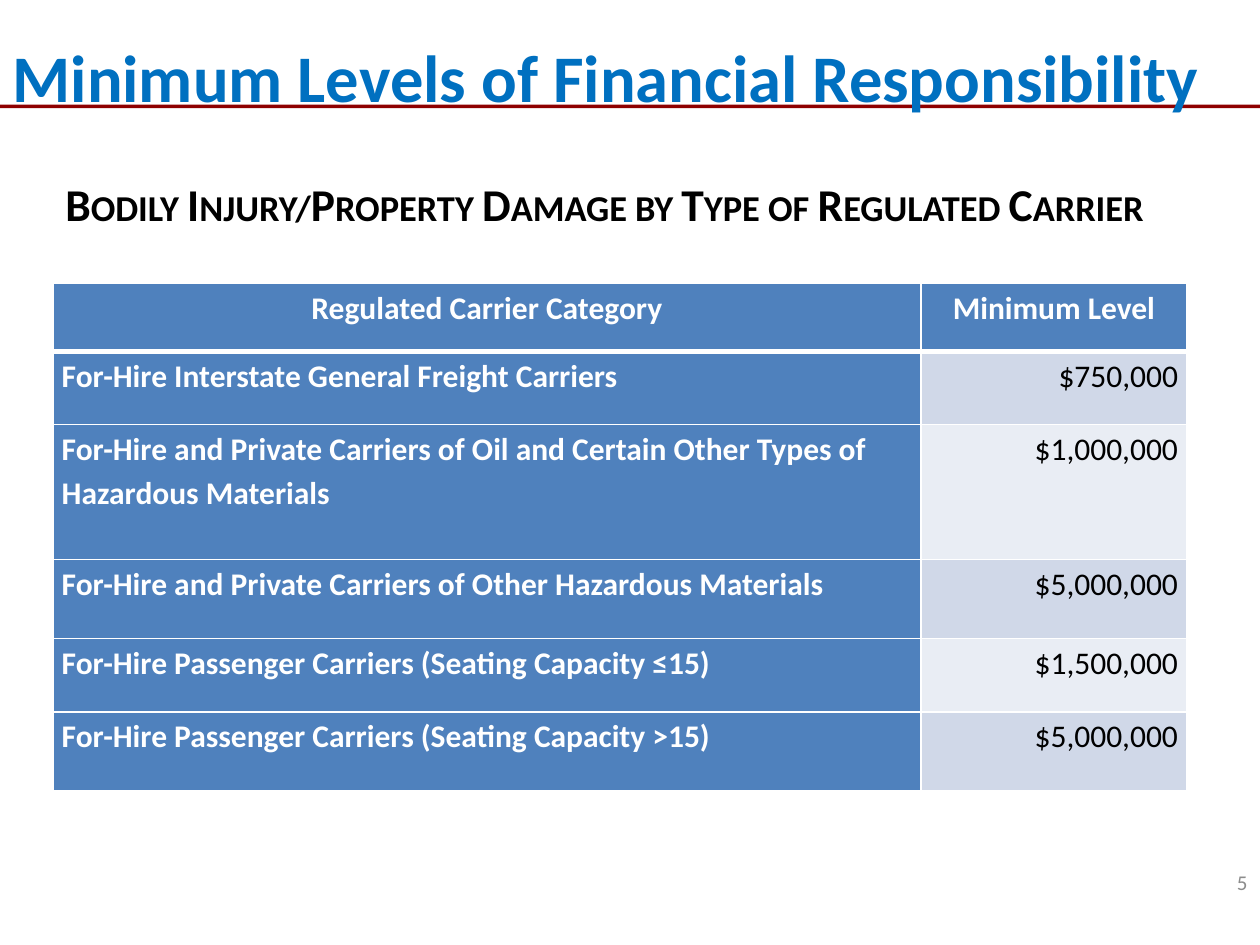
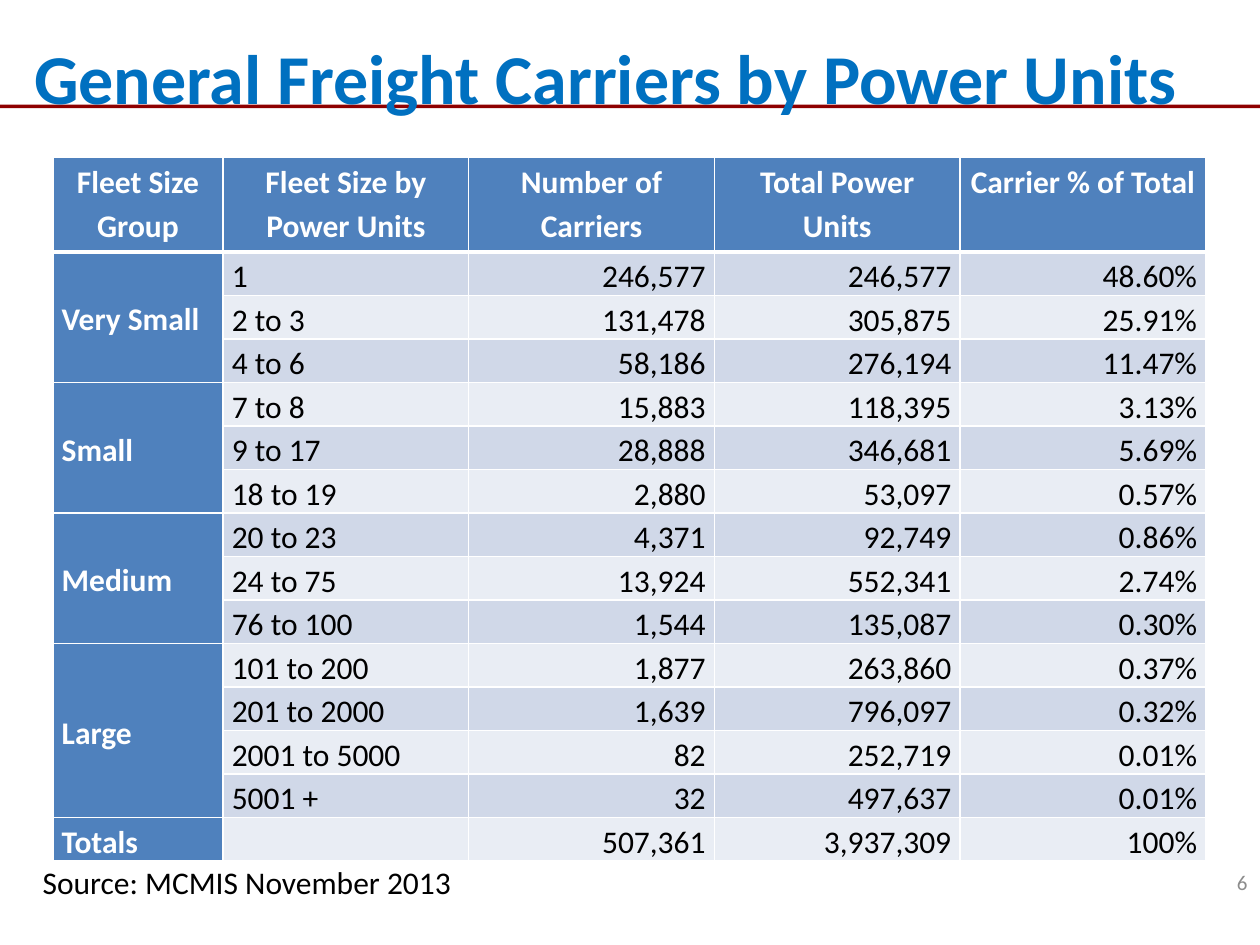
"""Build two slides on carrier insurance levels and fleet sizes."""
import pptx
import pptx.dml.color
import pptx.enum.shapes
import pptx.enum.text
import pptx.oxml
import pptx.oxml.ns
import pptx.util

PX = 9144
FONT = "Calibri"
TITLE_BLUE, TABLE_BLUE, BAND_RED = "0070C0", "4F81BD", "8E0000"
ROW_TINTS = ["E9EDF4", "D0D8E8"]
WHITE, BLACK, GREY = "FFFFFF", "000000", "8C8C8C"
ALIGN = pptx.enum.text.PP_ALIGN
ANCHOR = pptx.enum.text.MSO_ANCHOR


def paint(color):
    return pptx.dml.color.RGBColor.from_string(color)


def write(frame, text, size=18, color=BLACK, bold=False, align=ALIGN.LEFT,
          anchor=ANCHOR.TOP, spacing=1.0, small_caps=False):
    frame.word_wrap = True
    frame.vertical_anchor = anchor
    for number, line in enumerate(text.split("\n")):
        para = frame.add_paragraph() if number else frame.paragraphs[0]
        para.alignment = align
        para.line_spacing = spacing
        span = para.add_run()
        span.text = line
        span.font.name = FONT
        span.font.size = pptx.util.Pt(size)
        span.font.bold = bold
        span.font.color.rgb = paint(color)
        if small_caps:
            span.font._element.set("cap", "small")


pages = [
    {
        "title": "Minimum Levels of Financial Responsibility",
        "title_size": 38, "title_left": 0, "number": "5",
        "caption": "Bodily Injury/Property Damage by Type of Regulated Carrier",
        "caption_box": (42, 135, 950, 54),
        "caption_format": {"size": 26, "bold": True, "small_caps": True},
        "top": 225, "widths": [689, 211],
        "heights": [54, 58, 107, 63, 58, 63],
        "text_columns": 1, "anchor": ANCHOR.TOP, "groups": [],
        "rows": [
            ["Regulated Carrier Category", "Minimum Level"],
            ["For-Hire Interstate General Freight Carriers", "$750,000"],
            ["For-Hire and Private Carriers of Oil and Certain Other Types of "
             "Hazardous Materials", "$1,000,000"],
            ["For-Hire and Private Carriers of Other Hazardous Materials", "$5,000,000"],
            ["For-Hire Passenger Carriers (Seating Capacity ≤15)", "$1,500,000"],
            ["For-Hire Passenger Carriers (Seating Capacity >15)", "$5,000,000"],
        ],
    },
    {
        "title": "General Freight Carriers by Power Units",
        "title_size": 40, "title_left": 17, "number": "6",
        "caption": "Source: MCMIS November 2013",
        "caption_box": (24, 680, 400, 40),
        "caption_format": {},
        "top": 125, "widths": [135] + [195] * 4,
        "heights": [75] + [34] * 14,
        "text_columns": 2, "anchor": ANCHOR.MIDDLE,
        "groups": [(1, 3), (4, 6), (7, 9), (10, 13)],
        "rows": [
            ["Fleet Size Group", "Fleet Size by\nPower Units", "Number of Carriers",
             "Total Power Units", "Carrier % of Total"],
            ["Very Small", "1", "246,577", "246,577", "48.60%"],
            ["", "2 to 3", "131,478", "305,875", "25.91%"],
            ["", "4 to 6", "58,186", "276,194", "11.47%"],
            ["Small", "7 to 8", "15,883", "118,395", "3.13%"],
            ["", "9 to 17", "28,888", "346,681", "5.69%"],
            ["", "18 to 19", "2,880", "53,097", "0.57%"],
            ["Medium", "20 to 23", "4,371", "92,749", "0.86%"],
            ["", "24 to 75", "13,924", "552,341", "2.74%"],
            ["", "76 to 100", "1,544", "135,087", "0.30%"],
            ["Large", "101 to 200", "1,877", "263,860", "0.37%"],
            ["", "201 to 2000", "1,639", "796,097", "0.32%"],
            ["", "2001 to 5000", "82", "252,719", "0.01%"],
            ["", "5001 +", "32", "497,637", "0.01%"],
            ["Totals", "", "507,361", "3,937,309", "100%"],
        ],
    },
]

deck = pptx.Presentation()
deck.slide_width, deck.slide_height = 1000 * PX, 750 * PX
layout = deck.slide_layouts[5]

for page in pages:
    slide = deck.slides.add_slide(layout)
    if page is pages[0]:
        band = slide.shapes.add_shape(
            pptx.enum.shapes.MSO_SHAPE.RECTANGLE, 0, 83 * PX, 1000 * PX, 3 * PX)
        band.shadow.inherit = False
        band.fill.solid()
        band.fill.fore_color.rgb = paint(BAND_RED)
        band.line.fill.background()
        deck.slide_master.shapes._spTree.append(band._element)

    title = slide.shapes.title
    title.left, title.top = page["title_left"] * PX, 17 * PX
    title.width, title.height = (1000 - page["title_left"]) * PX, 87 * PX
    title.text_frame.auto_size = pptx.enum.text.MSO_AUTO_SIZE.NONE
    write(title.text_frame, page["title"], size=page["title_size"],
          color=TITLE_BLUE, bold=True, anchor=ANCHOR.MIDDLE)

    number_box = slide.shapes.add_textbox(767 * PX, 680 * PX, 233 * PX, 40 * PX)
    write(number_box.text_frame, page["number"], size=12, color=GREY,
          align=ALIGN.RIGHT, anchor=ANCHOR.MIDDLE)

    widths, heights = page["widths"], page["heights"]
    table = slide.shapes.add_table(
        len(heights), len(widths), 42 * PX, page["top"] * PX,
        sum(widths) * PX, sum(heights) * PX).table
    table.horz_banding = False
    for column, width in zip(table.columns, widths):
        column.width = width * PX
    for row, height in zip(table.rows, heights):
        row.height = height * PX

    for r, values in enumerate(page["rows"]):
        for c, value in enumerate(values):
            cell = table.cell(r, c)
            cell.margin_left = cell.margin_right = 7 * PX
            cell.margin_top = cell.margin_bottom = 0
            for side in "LRTB":
                thick = (r, side) in [(0, "B"), (1, "T")]
                cell._tc.get_or_add_tcPr().append(pptx.oxml.parse_xml(
                    f'<a:ln{side} {pptx.oxml.ns.nsdecls("a")} w="{38100 if thick else 12700}">'
                    f'<a:solidFill><a:srgbClr val="{WHITE}"/></a:solidFill></a:ln{side}>'))
            heading = r == 0 or c == 0
            cell.fill.solid()
            cell.fill.fore_color.rgb = paint(TABLE_BLUE if heading else ROW_TINTS[r % 2])
            if value:
                body_align = ALIGN.LEFT if c < page["text_columns"] else ALIGN.RIGHT
                write(cell.text_frame, value, color=WHITE if heading else BLACK,
                      bold=heading, spacing=1.15,
                      align=body_align if r else ALIGN.CENTER)
            cell.vertical_anchor = page["anchor"] if r else ANCHOR.TOP
    for first, last in page["groups"]:
        table.cell(first, 0).merge(table.cell(last, 0))

    caption_box = slide.shapes.add_textbox(*[length * PX for length in page["caption_box"]])
    write(caption_box.text_frame, page["caption"], **page["caption_format"])

deck.save("out.pptx")
